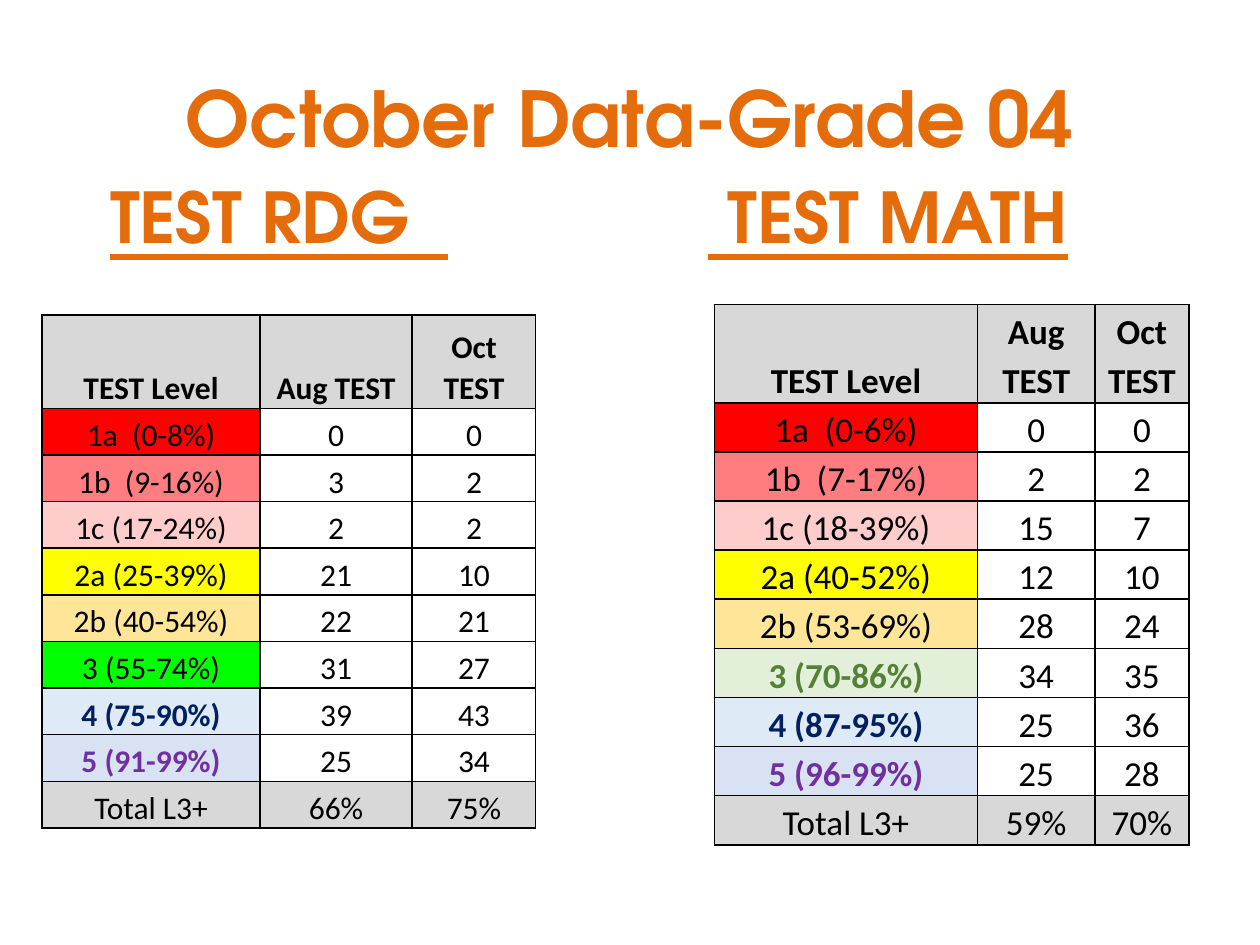
import dataclasses
import typing

import pptx
import pptx.dml.color
import pptx.enum.text
import pptx.oxml
import pptx.oxml.ns
import pptx.util

Cm = pptx.util.Cm
Pt = pptx.util.Pt
ALIGN = pptx.enum.text.PP_ALIGN
ANCHOR = pptx.enum.text.MSO_ANCHOR


@dataclasses.dataclass(frozen=True)
class Theme:
    heading_font: str = "TeX Gyre Adventor"
    body_font: str = "Calibri"
    title_size: int = 44
    heading_size: int = 40
    reading_size: int = 18
    math_size: int = 20
    accent: str = "E46C0A"
    ink: str = "000000"
    white: str = "FFFFFF"
    grey: str = "D8D8D8"
    green_ink: str = "548135"
    navy: str = "002060"
    purple: str = "7030A0"
    red: str = "FF0000"
    coral: str = "FF7C80"
    pink: str = "FFCCCC"
    yellow: str = "FFFF00"
    sand: str = "FFE598"
    green: str = "00FF00"
    pale_green: str = "E2EFD9"
    pale_blue: str = "DEEAF6"
    lavender: str = "D9E2F3"


THEME = Theme()


@dataclasses.dataclass(frozen=True)
class Level:
    label: str
    aug: str
    oct: str
    fill: str
    ink: str = THEME.ink
    bold: bool = False


@dataclasses.dataclass(frozen=True)
class ScoreTable:
    left: float
    top: float
    widths: tuple[float, ...]
    row_height: float
    size: int
    spacing: float
    levels: tuple[Level, ...]
    totals: tuple[str, str, str]


READING = ScoreTable(
    0.85, 6.35, (4.39, 3.07, 2.49), 0.94, THEME.reading_size, 1.07,
    (
        Level("1a  (0-8%)", "0", "0", THEME.red),
        Level("1b  (9-16%)", "3", "2", THEME.coral),
        Level("1c (17-24%)", "2", "2", THEME.pink),
        Level("2a (25-39%)", "21", "10", THEME.yellow),
        Level("2b (40-54%)", "22", "21", THEME.sand),
        Level("3 (55-74%)", "31", "27", THEME.green),
        Level("4 (75-90%)", "39", "43", THEME.pale_blue, THEME.navy, True),
        Level("5 (91-99%)", "25", "34", THEME.lavender, THEME.purple, True),
    ),
    ("Total L3+", "66%", "75%"),
)
MATH = ScoreTable(
    14.4, 6.14, (5.31, 2.36, 1.9), 0.99, THEME.math_size, 1.15,
    (
        Level("1a  (0-6%)", "0", "0", THEME.red),
        Level("1b  (7-17%)", "2", "2", THEME.coral),
        Level("1c (18-39%)", "15", "7", THEME.pink),
        Level("2a (40-52%)", "12", "10", THEME.yellow),
        Level("2b (53-69%)", "28", "24", THEME.sand),
        Level("3 (70-86%)", "34", "35", THEME.pale_green, THEME.green_ink, True),
        Level("4 (87-95%)", "25", "36", THEME.pale_blue, THEME.navy, True),
        Level("5 (96-99%)", "25", "28", THEME.lavender, THEME.purple, True),
    ),
    ("Total L3+", "59%", "70%"),
)


def set_attrs(target: typing.Any, values: dict[str, typing.Any]) -> None:
    for name, value in values.items():
        setattr(target, name, value)


def add_run(p: typing.Any, text: str, color: str, **font: typing.Any) -> None:
    r = p.add_run()
    r.text = text
    set_attrs(r.font, font)
    r.font.color.rgb = pptx.dml.color.RGBColor.from_string(color)


def add_text_box(slide: typing.Any, left: float, top: float, width: float,
                 height: float, **frame: typing.Any) -> typing.Any:
    sp = slide.shapes.add_textbox(Cm(left), Cm(top), Cm(width), Cm(height))
    set_attrs(sp.text_frame, {"word_wrap": True, **frame})
    return sp.text_frame.paragraphs[0]


def add_tab_stop(p: typing.Any, position: float) -> None:
    ns = pptx.oxml.ns.nsdecls("a")
    p._p.get_or_add_pPr().append(pptx.oxml.parse_xml(
        f'<a:tabLst {ns}><a:tab pos="{Cm(position)}" algn="l"/></a:tabLst>'))


def add_borders(cell: typing.Any) -> None:
    ns = pptx.oxml.ns.nsdecls("a")
    for i, side in enumerate(("lnL", "lnR", "lnT", "lnB")):
        cell._tc.get_or_add_tcPr().insert(i, pptx.oxml.parse_xml(
            f'<a:{side} {ns} w="{Pt(1)}"><a:solidFill><a:srgbClr val="{THEME.ink}"/>'
            f'</a:solidFill></a:{side}>'))


def fill_cell(cell: typing.Any, text: str, fill: str, ink: str, bold: bool,
              data: ScoreTable) -> None:
    set_attrs(cell, {
        "vertical_anchor": ANCHOR.BOTTOM, "margin_left": Cm(0.18),
        "margin_right": Cm(0.18), "margin_top": 0, "margin_bottom": 0,
    })
    cell.fill.solid()
    cell.fill.fore_color.rgb = pptx.dml.color.RGBColor.from_string(fill)
    p = cell.text_frame.paragraphs[0]
    set_attrs(p, {"alignment": ALIGN.CENTER, "line_spacing": data.spacing})
    add_run(p, text, ink, name=THEME.body_font, size=Pt(data.size), bold=bold)
    add_borders(cell)


def add_score_table(slide: typing.Any, data: ScoreTable) -> None:
    count = len(data.levels) + 2
    table = slide.shapes.add_table(
        count, len(data.widths), Cm(data.left), Cm(data.top),
        Cm(sum(data.widths)), Cm(data.row_height * (count + 1))).table
    for column, width in zip(table.columns, data.widths):
        column.width = Cm(width)
    for i, row in enumerate(table.rows):
        row.height = Cm(data.row_height * (2 if i == 0 else 1))
    for col, text in enumerate(("TEST Level", "Aug TEST", "Oct TEST")):
        fill_cell(table.cell(0, col), text, THEME.grey, THEME.ink, True, data)
    for row, level in enumerate(data.levels, 1):
        fill_cell(table.cell(row, 0), level.label, level.fill, level.ink, level.bold, data)
        for col, text in enumerate((level.aug, level.oct), 1):
            fill_cell(table.cell(row, col), text, THEME.white, THEME.ink, False, data)
    for col, text in enumerate(data.totals):
        fill_cell(table.cell(count - 1, col), text, THEME.grey, THEME.ink, False, data)


def main() -> None:
    prs = pptx.Presentation()
    set_attrs(prs, {"slide_width": Cm(25.4), "slide_height": Cm(19.05)})
    slide = prs.slides.add_slide(prs.slide_layouts[6])
    font = {"name": THEME.heading_font, "bold": True}

    p = add_text_box(slide, 1.27, 0.76, 22.86, 3.18, vertical_anchor=ANCHOR.MIDDLE)
    p.alignment = ALIGN.CENTER
    add_run(p, "October Data-Grade 04", THEME.accent, size=Pt(THEME.title_size), **font)

    p = add_text_box(slide, 1.47, 3.38, 22.86, 12.57, margin_left=Cm(0.75))
    add_tab_stop(p, 12.06)
    for text, underline in (("TEST RDG  ", True), ("\t", False), (" TEST MATH", True)):
        add_run(p, text, THEME.accent, size=Pt(THEME.heading_size),
                underline=underline, **font)

    for data in (MATH, READING):
        add_score_table(slide, data)
    prs.save("out.pptx")


if __name__ == "__main__":
    main()
